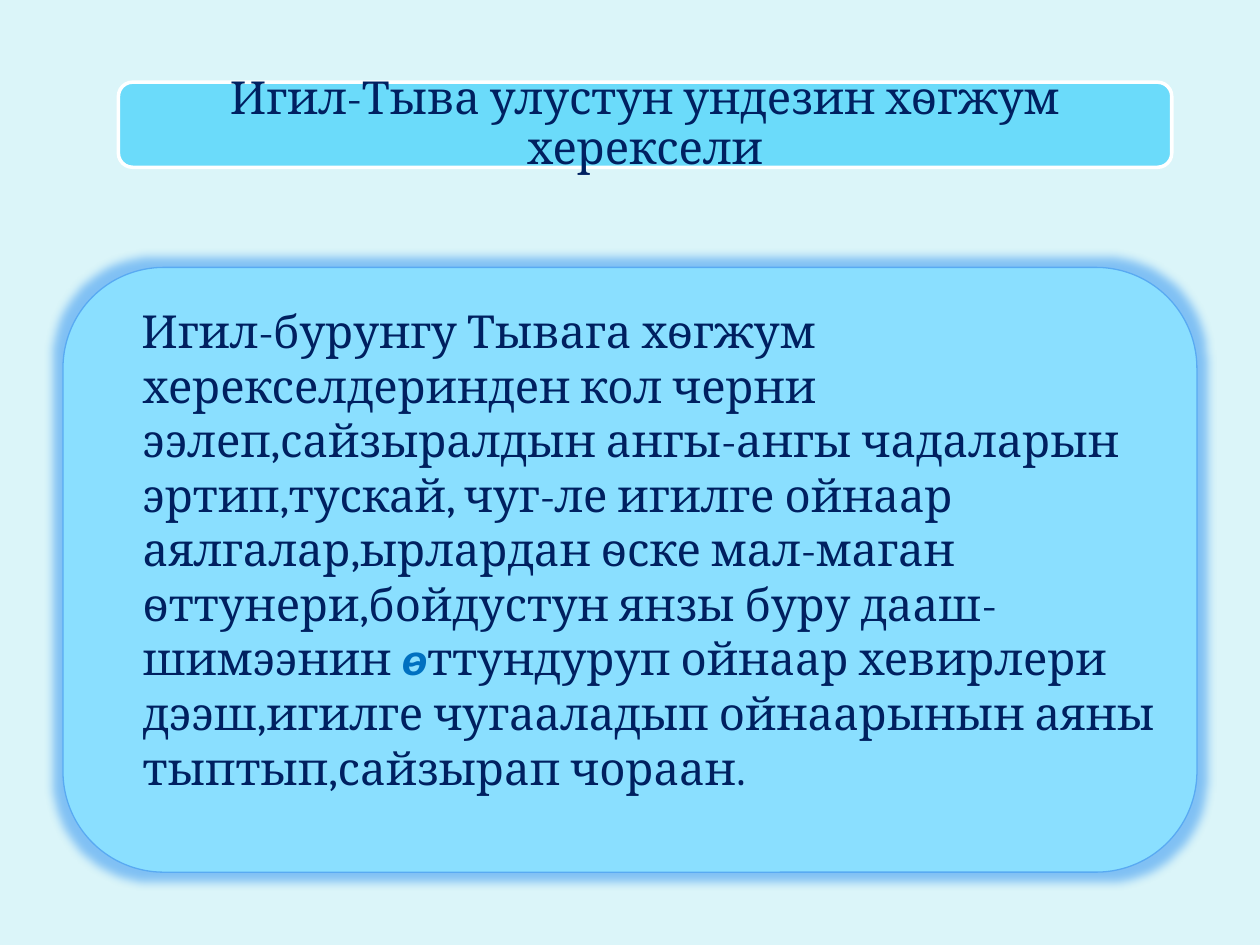
import pptx
import pptx.util
import pptx.dml.color
import pptx.enum.shapes
import pptx.enum.text
import pptx.oxml
import pptx.oxml.ns

Inches = pptx.util.Inches
Pt = pptx.util.Pt
RGBColor = pptx.dml.color.RGBColor

WIDTH, HEIGHT = Inches(10), Inches(7.5)
BACKGROUND = RGBColor(0xDB, 0xF5, 0xF9)
BANNER = RGBColor(0x6B, 0xDB, 0xFA)
PANEL = RGBColor(0x8A, 0xDF, 0xFF)
PANEL_LINE = RGBColor(0x59, 0xAA, 0xF2)
WHITE = RGBColor(0xFF, 0xFF, 0xFF)
NAVY = RGBColor(0x00, 0x20, 0x60)
BLUE = RGBColor(0x00, 0x70, 0xC0)

TITLE = "Игил-Тыва улустун ундезин хѳгжум херексели"
BEFORE_LETTER = (
    "Игил-бурунгу Тывага хѳгжум херекселдеринден кол черни "
    "ээлеп,сайзыралдын ангы-ангы чадаларын эртип,тускай, чуг-ле игилге "
    "ойнаар аялгалар,ырлардан ѳске мал-маган ѳттунери,бойдустун янзы буру "
    "дааш-шимээнин "
)
LETTER = "ѳ"
AFTER_LETTER = (
    "ттундуруп ойнаар хевирлери дээш,игилге чугааладып ойнаарынын аяны "
    "тыптып,сайзырап чораан."
)


def share_box(left, top, width, height):
    """Turn shares of the slide's size into a box in EMU."""
    return (int(left * WIDTH), int(top * HEIGHT),
            int(width * WIDTH), int(height * HEIGHT))


def format_run(run, size=26, font="Cambria", color=NAVY, emphasis=False):
    """Set the font of a run; emphasis means bold italic."""
    run.font.size = Pt(size)
    run.font.name = font
    run.font.color.rgb = color
    run.font.bold = emphasis
    run.font.italic = emphasis


def add_rounded_box(slide, box, fill, line, line_width):
    """Add a flat rounded rectangle."""
    shape = slide.shapes.add_shape(
        pptx.enum.shapes.MSO_SHAPE.ROUNDED_RECTANGLE, *box)
    shape.shadow.inherit = False
    shape.fill.solid()
    shape.fill.fore_color.rgb = fill
    shape.line.color.rgb = line
    shape.line.width = Pt(line_width)
    return shape


def add_glow(shape, color, radius, opacity):
    """Put a glow of the given radius and percent opacity around a shape."""
    glow = pptx.oxml.parse_xml(
        f'<a:glow {pptx.oxml.ns.nsdecls("a")} rad="{int(radius)}">'
        f'<a:srgbClr val="{color}"><a:alpha val="{opacity * 1000}"/>'
        f'</a:srgbClr></a:glow>')
    effects = shape.element.spPr.find(pptx.oxml.ns.qn("a:effectLst"))
    effects.append(glow)


def build_banner(slide, box):
    """Place the title on a rounded banner."""
    banner = add_rounded_box(slide, box, BANNER, WHITE, 2)
    title = slide.shapes.title
    title.element.addprevious(banner.element)
    inset = Inches(0.03)
    left, top, width, height = box
    title.left, title.top = left + inset, top + inset
    title.width, title.height = width - 2 * inset, height - 2 * inset
    frame = title.text_frame
    frame.text = TITLE
    frame.word_wrap = True
    frame.auto_size = pptx.enum.text.MSO_AUTO_SIZE.NONE
    frame.vertical_anchor = pptx.enum.text.MSO_ANCHOR.MIDDLE
    frame.margin_left = frame.margin_right = Inches(0.11)
    frame.margin_top = frame.margin_bottom = Inches(0.11)
    paragraph = frame.paragraphs[0]
    paragraph.alignment = pptx.enum.text.PP_ALIGN.CENTER
    paragraph.line_spacing = 0.9
    format_run(paragraph.runs[0])


def build_panel(slide, box):
    """Place the body text in a glowing rounded panel."""
    panel = add_rounded_box(slide, box, PANEL, PANEL_LINE, 0.75)
    add_glow(panel, PANEL_LINE, Pt(11), 70)
    frame = panel.text_frame
    frame.word_wrap = True
    frame.vertical_anchor = pptx.enum.text.MSO_ANCHOR.TOP
    paragraph = frame.paragraphs[0]
    paragraph.alignment = pptx.enum.text.PP_ALIGN.LEFT
    paragraph.space_before = Pt(5)
    properties = paragraph._p.get_or_add_pPr()
    properties.set("marL", str(Inches(0.3)))
    properties.set("indent", str(Inches(-0.01)))
    for text in (BEFORE_LETTER, LETTER, AFTER_LETTER):
        run = paragraph.add_run()
        run.text = text
        if text == LETTER:
            format_run(run, 24, "Arial", BLUE, True)
        else:
            format_run(run)


def main():
    """Build and save the presentation."""
    presentation = pptx.Presentation()
    presentation.slide_width, presentation.slide_height = WIDTH, HEIGHT
    slide = presentation.slides.add_slide(presentation.slide_layouts[5])
    slide.background.fill.solid()
    slide.background.fill.fore_color.rgb = BACKGROUND
    build_banner(slide, share_box(0.094, 0.087, 0.836, 0.09))
    build_panel(slide, share_box(0.05, 0.283, 0.9, 0.64))
    presentation.save("out.pptx")


if __name__ == "__main__":
    main()
